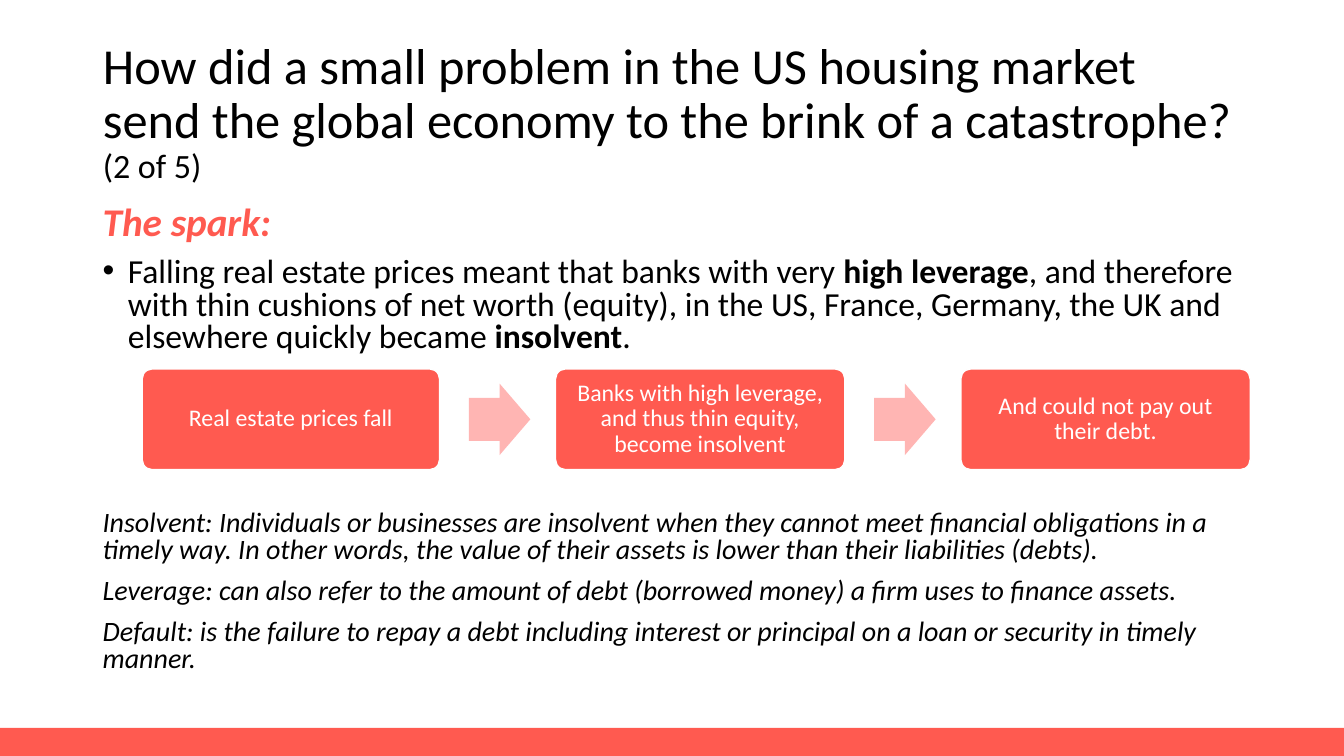
from lxml import etree
from pptx import Presentation
from pptx.dml.color import RGBColor
from pptx.enum import shapes, text
from pptx.oxml import ns
from pptx.util import Inches, Pt

CORAL = RGBColor(0xFF, 0x5A, 0x50)
PINK = RGBColor(0xFF, 0xB5, 0xB3)
BLACK = RGBColor(0, 0, 0)
WHITE = RGBColor(0xFF, 0xFF, 0xFF)

STEPS = [
    "Real estate prices fall",
    "Banks with high leverage, and thus thin equity, become insolvent",
    "And could not pay out their debt.",
]
DEFINITIONS = [
    "Insolvent: Individuals or businesses are insolvent when they cannot meet financial "
    "obligations in a timely way. In other words, the value of their assets is lower than "
    "their liabilities (debts).",
    "Leverage: can also refer to the amount of debt (borrowed money) a firm uses to finance assets.",
    "Default: is the failure to repay a debt including interest or principal on a loan or "
    "security in timely manner.",
]


def add_run(paragraph, words, size, color=BLACK, bold=False, italic=False):
    run = paragraph.add_run()
    run.text = words
    font = run.font
    font.name = "Calibri"
    font.size = Pt(size)
    font.color.rgb = color
    font.bold = bold
    font.italic = italic


def add_bullet(paragraph):
    properties = paragraph._p.get_or_add_pPr()
    properties.set("marL", str(Inches(0.25)))
    properties.set("indent", str(-Inches(0.25)))
    etree.SubElement(properties, ns.qn("a:buFont")).set("typeface", "Arial")
    etree.SubElement(properties, ns.qn("a:buChar")).set("char", "•")


def add_paragraph(frame, first=False):
    paragraph = frame.paragraphs[0] if first else frame.add_paragraph()
    paragraph.line_spacing = 0.8
    if not first:
        paragraph.space_before = Pt(10)
    return paragraph


def add_text_frame(slide, left, top, width, height):
    box = slide.shapes.add_textbox(Inches(left), Inches(top), Inches(width), Inches(height))
    box.text_frame.word_wrap = True
    return box.text_frame


def add_filled_shape(slide, kind, left, top, width, height, color):
    shape = slide.shapes.add_shape(kind, Inches(left), Inches(top), Inches(width), Inches(height))
    shape.shadow.inherit = False
    shape.fill.solid()
    shape.fill.fore_color.rgb = color
    shape.line.fill.background()
    return shape


def add_title(slide, left, top, width, height):
    title = slide.shapes.title
    title.left, title.top = Inches(left), Inches(top)
    title.width, title.height = Inches(width), Inches(height)
    frame = title.text_frame
    frame.word_wrap = True
    frame.auto_size = text.MSO_AUTO_SIZE.NONE
    frame.vertical_anchor = text.MSO_ANCHOR.MIDDLE
    paragraph = frame.paragraphs[0]
    paragraph.alignment = text.PP_ALIGN.LEFT
    paragraph.line_spacing = 0.9
    add_run(paragraph, "How did a small problem in the US housing market send the global "
            "economy to the brink of a catastrophe? ", 36)
    add_run(paragraph, "(2 of 5)", 24.3)


def add_spark(slide, left, top, width, height):
    frame = add_text_frame(slide, left, top, width, height)
    add_run(add_paragraph(frame, first=True), "The spark:", 28, CORAL, bold=True, italic=True)
    paragraph = add_paragraph(frame)
    add_bullet(paragraph)
    add_run(paragraph, "Falling real estate prices meant that banks with very ", 24)
    add_run(paragraph, "high leverage", 24, bold=True)
    add_run(paragraph, ", and therefore with thin cushions of net worth (equity), in the US, "
            "France, Germany, the UK and elsewhere quickly became ", 24)
    add_run(paragraph, "insolvent", 24, bold=True)
    add_run(paragraph, ".", 24)


def add_step(slide, left, top, width, height, words):
    card = add_filled_shape(slide, shapes.MSO_SHAPE.ROUNDED_RECTANGLE,
                            left, top, width, height, CORAL)
    card.adjustments[0] = 0.1
    card.line.color.rgb = WHITE
    card.line.width = Pt(1)
    frame = card.text_frame
    frame.word_wrap = True
    frame.vertical_anchor = text.MSO_ANCHOR.MIDDLE
    paragraph = frame.paragraphs[0]
    paragraph.alignment = text.PP_ALIGN.CENTER
    paragraph.line_spacing = 0.9
    add_run(paragraph, words, 17, WHITE)


def add_process(slide, left, top, width, height):
    gap, arrow_width, arrow_height = 1.15, 0.61, 0.71
    later_width = 2.87
    first_width = width - 2 * (gap + later_width)
    step_left = left
    for index, words in enumerate(STEPS):
        step_width = later_width if index else first_width
        if index:
            arrow = add_filled_shape(slide, shapes.MSO_SHAPE.RIGHT_ARROW,
                                     step_left - 0.86, top + (height - arrow_height) / 2,
                                     arrow_width, arrow_height, PINK)
            arrow.adjustments[0] = 0.6
            arrow.adjustments[1] = 0.5
        add_step(slide, step_left, top, step_width, height, words)
        step_left += step_width + gap


def add_definitions(slide, left, top, width, height):
    frame = add_text_frame(slide, left, top, width, height)
    for index, words in enumerate(DEFINITIONS):
        add_run(add_paragraph(frame, first=index == 0), words, 20, italic=True)


def main():
    presentation = Presentation()
    presentation.slide_width = Inches(13.33)
    presentation.slide_height = Inches(7.5)
    slide = presentation.slides.add_slide(presentation.slide_layouts[5])
    add_filled_shape(slide, shapes.MSO_SHAPE.RECTANGLE, 0, 7.22, 13.33, 0.28, CORAL)
    add_title(slide, 0.92, 0.4, 11.5, 1.45)
    add_spark(slide, 0.92, 2, 11.5, 1.6)
    add_process(slide, 1.41, 3.66, 10.99, 1)
    add_definitions(slide, 0.92, 5.02, 11.5, 1.74)
    presentation.save("out.pptx")


if __name__ == "__main__":
    main()
